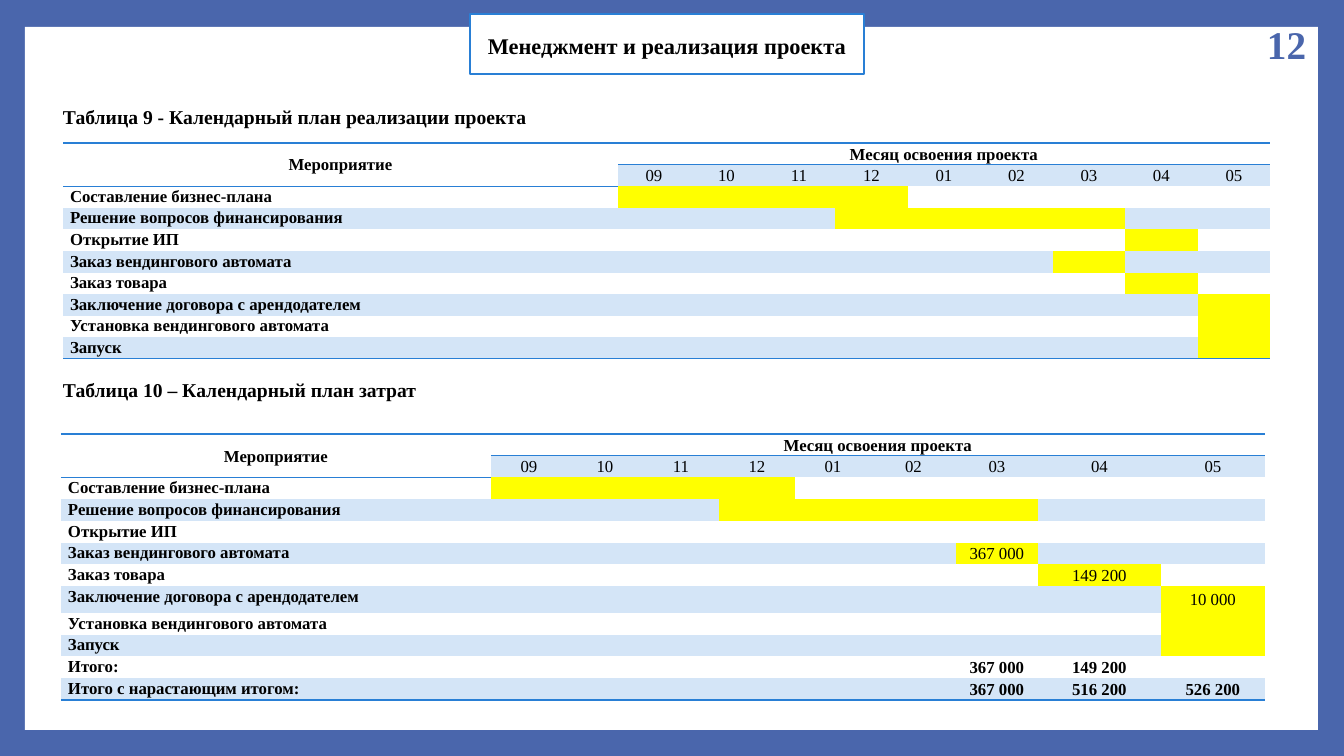
import lxml.etree
import pptx
import pptx.dml.color
import pptx.enum.shapes
import pptx.enum.text
import pptx.oxml.ns
import pptx.util

RGBColor = pptx.dml.color.RGBColor
ALIGN = pptx.enum.text.PP_ALIGN
ANCHOR = pptx.enum.text.MSO_ANCHOR
qn = pptx.oxml.ns.qn

INDIGO = RGBColor(0x4A, 0x66, 0xAC)
BLUE = RGBColor(0x29, 0x7F, 0xD5)
PALE = RGBColor(0xD4, 0xE5, 0xF7)
YELLOW = RGBColor(0xFF, 0xFF, 0x00)
WHITE = RGBColor(0xFF, 0xFF, 0xFF)
BLACK = RGBColor(0x00, 0x00, 0x00)

PX = 914400 / 100.8
NO_GRID_STYLE = "{2D5ABB26-0587-4C30-8999-92F81FD0307C}"

MONTHS = ["09", "10", "11", "12", "01", "02", "03", "04", "05"]

# Task name, indexes of highlighted months, amounts by month index
SCHEDULE = [
    ("Составление бизнес-плана", range(0, 4), {}),
    ("Решение вопросов финансирования", range(3, 7), {}),
    ("Открытие ИП", [7], {}),
    ("Заказ вендингового автомата", [6], {}),
    ("Заказ товара", [7], {}),
    ("Заключение договора с арендодателем", [8], {}),
    ("Установка вендингового автомата", [8], {}),
    ("Запуск", [8], {}),
]
AMOUNTS = {3: {6: "367 000"}, 4: {7: "149 200"}, 5: {8: "10 000"}}
COSTS = [
    (name, [] if name == "Открытие ИП" else months, AMOUNTS.get(index, {}))
    for index, (name, months, _) in enumerate(SCHEDULE)
] + [
    ("Итого:", [], {6: "367 000", 7: "149 200"}),
    ("Итого с нарастающим итогом:", [], {6: "367 000", 7: "516 200", 8: "526 200"}),
]


def emu(px):
    return pptx.util.Emu(round(px * PX))


def apply(target, values):
    for name, value in values.items():
        setattr(target, name, value)


class Slide:
    font = "Times New Roman"

    def __init__(self, deck):
        self.page = deck.slides.add_slide(deck.slide_layouts[5])
        self.shapes = self.page.shapes
        self.page.background.fill.solid()
        self.page.background.fill.fore_color.rgb = INDIGO

    def wording(self, frame, text, size, color=BLACK, bold=True, align=ALIGN.LEFT, spacing=1.0):
        para = frame.paragraphs[0]
        apply(para, {"alignment": align, "line_spacing": spacing})
        if text:
            span = para.add_run()
            span.text = text
            apply(span.font, {"name": self.font, "size": pptx.util.Pt(size), "bold": bold})
            span.font.color.rgb = color
        else:
            lxml.etree.SubElement(para._p, qn("a:endParaRPr"), sz=str(size * 100))

    def panel(self, left, top, width, height):
        box = self.shapes.add_shape(pptx.enum.shapes.MSO_SHAPE.RECTANGLE,
                                    emu(left), emu(top), emu(width), emu(height))
        box.shadow.inherit = False
        box.fill.solid()
        box.fill.fore_color.rgb = WHITE
        box.line.fill.background()

    def title(self, text, left, top, width, height):
        box = self.shapes.title
        apply(box, {"left": emu(left), "top": emu(top),
                    "width": emu(width), "height": emu(height)})
        # Plaque outline, in front of the panel
        outline = lxml.etree.SubElement(box._element.spPr, qn("a:prstGeom"), prst="plaque")
        lxml.etree.SubElement(outline, qn("a:avLst"))
        self.shapes._spTree.append(box._element)
        box.fill.solid()
        box.fill.fore_color.rgb = WHITE
        box.line.color.rgb = BLUE
        box.line.width = pptx.util.Pt(1.5)
        apply(box.text_frame, {"word_wrap": False, "vertical_anchor": ANCHOR.TOP,
                               "auto_size": pptx.enum.text.MSO_AUTO_SIZE.NONE})
        self.wording(box.text_frame, text, 16, align=ALIGN.CENTER, spacing=1.5)

    def text(self, text, left, top, width, height, size, wrap=False, anchor=ANCHOR.TOP, **style):
        box = self.shapes.add_textbox(emu(left), emu(top), emu(width), emu(height))
        apply(box.text_frame, {"word_wrap": wrap, "vertical_anchor": anchor})
        self.wording(box.text_frame, text, size, **style)

    def cell(self, cell, text="", fill=None, lines="", bold=True, align=ALIGN.CENTER):
        apply(cell, {"margin_left": emu(7), "margin_right": emu(7),
                     "margin_top": 0, "margin_bottom": 0,
                     "vertical_anchor": ANCHOR.TOP if align == ALIGN.JUSTIFY else ANCHOR.MIDDLE})
        for side in lines:
            line = lxml.etree.SubElement(cell._tc.tcPr, qn("a:ln" + side), w="12700")
            solid = lxml.etree.SubElement(line, qn("a:solidFill"))
            lxml.etree.SubElement(solid, qn("a:srgbClr"), val=str(BLUE))
        if fill is None:
            cell.fill.background()
        else:
            cell.fill.solid()
            cell.fill.fore_color.rgb = fill
        self.wording(cell.text_frame, text, 12, bold=bold, align=align, spacing=1.07)

    def calendar(self, tasks, left, top, height, widths, extra=None):
        extra = extra or {}
        count = len(tasks) + 2
        frame = self.shapes.add_table(count, len(widths), emu(left), emu(top),
                                      emu(sum(widths)), emu(height))
        table = frame.table
        apply(table, {"first_row": False, "horz_banding": False})
        next(table._tbl.iter(qn("a:tableStyleId"))).text = NO_GRID_STYLE
        for column, width in zip(table.columns, widths):
            column.width = emu(width)
        even = (height - sum(extra.values())) / count
        for index, row in enumerate(table.rows):
            row.height = emu(even + extra.get(index, 0))

        # Header
        table.cell(0, 0).merge(table.cell(1, 0))
        table.cell(0, 1).merge(table.cell(0, len(MONTHS)))
        self.cell(table.cell(0, 0), "Мероприятие", lines="TB")
        self.cell(table.cell(1, 0), lines="B")
        for column, month in enumerate(MONTHS, 1):
            heading = "Месяц освоения проекта" if column == 1 else ""
            self.cell(table.cell(0, column), heading, lines="TB")
            self.cell(table.cell(1, column), month, PALE, bold=False)

        # Tasks, with every second row tinted
        for row, (name, active, amounts) in enumerate(tasks, 2):
            band = PALE if row % 2 else None
            lines = "B" if row == count - 1 else ""
            self.cell(table.cell(row, 0), name, band, lines, align=ALIGN.JUSTIFY)
            for month in range(len(MONTHS)):
                marked = month in active
                self.cell(table.cell(row, month + 1), amounts.get(month, ""),
                          YELLOW if marked else band, lines, bold=not marked)


def main():
    deck = pptx.Presentation()
    apply(deck, {"slide_width": emu(1344), "slide_height": emu(756)})
    slide = Slide(deck)

    # Frame and title
    slide.panel(25, 27, 1293, 703)
    slide.title("Менеджмент и реализация проекта", 470, 14, 394, 60)

    # Project schedule
    slide.calendar(SCHEDULE, 63, 143, 216, [555] + [72 + i % 2 for i in range(9)])
    slide.text("Таблица 9 - Календарный план реализации проекта", 53, 88, 489, 42, 14,
               align=ALIGN.JUSTIFY, spacing=1.5)

    # Cost schedule
    slide.calendar(COSTS, 61, 434, 266, [430] + [76] * 5 + [85, 82, 123, 104], extra={7: 5})
    slide.text("Таблица 10 – Календарный план затрат", 53, 373, 377, 34, 14)

    # Page number
    slide.text("12", 1243, 24, 73, 40, 28, wrap=True, anchor=ANCHOR.MIDDLE,
               color=INDIGO, align=ALIGN.RIGHT)

    deck.save("out.pptx")


if __name__ == "__main__":
    main()
